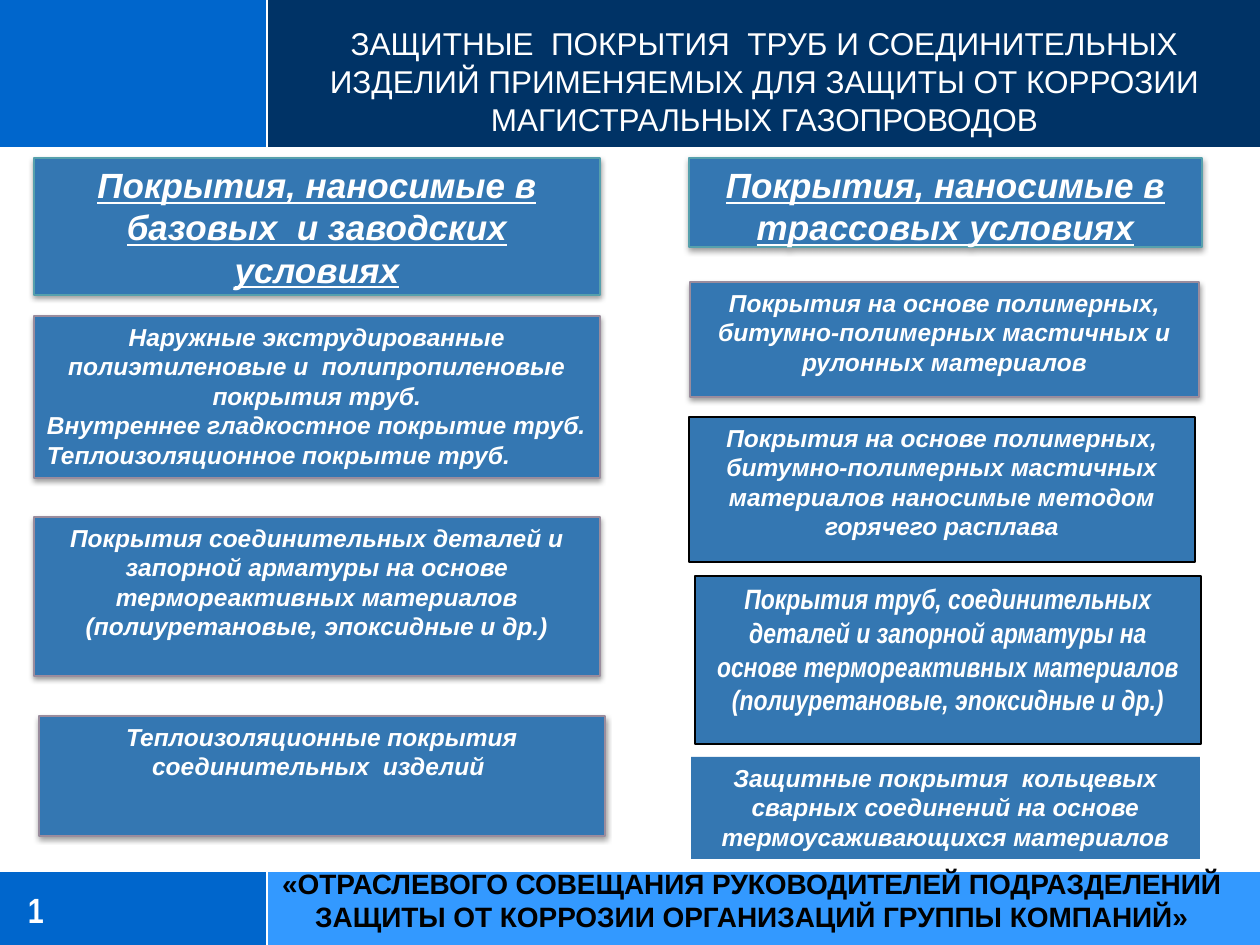
from lxml import etree
from pptx import Presentation
from pptx.dml.color import RGBColor
from pptx.enum.shapes import MSO_CONNECTOR, MSO_SHAPE
from pptx.enum.text import MSO_ANCHOR, MSO_AUTO_SIZE, PP_ALIGN
from pptx.oxml import parse_xml
from pptx.oxml.ns import nsdecls, qn
from pptx.util import Emu, Pt

STRAIGHT = MSO_CONNECTOR.STRAIGHT
RECTANGLE = MSO_SHAPE.RECTANGLE
TOP, MIDDLE = MSO_ANCHOR.TOP, MSO_ANCHOR.MIDDLE
CENTER, LEFT = PP_ALIGN.CENTER, PP_ALIGN.LEFT

WHITE = RGBColor(0xFF, 0xFF, 0xFF)
BLACK = RGBColor(0x00, 0x00, 0x00)
NAVY = RGBColor(0x00, 0x33, 0x66)
BLUE = RGBColor(0x00, 0x66, 0xCC)
SKY = RGBColor(0x33, 0x99, 0xFF)
STEEL = RGBColor(0x34, 0x77, 0xB2)
TEAL = RGBColor(0x56, 0xA0, 0xAC)
MAUVE = RGBColor(0x9A, 0x8C, 0x9D)

PX_PER_INCH = 126
WIDTH, HEIGHT = 1260, 945
SPLIT, HEADER_END, FOOTER_START = 267, 148, 871
INSET = (13, 6)

TITLE = ("ЗАЩИТНЫЕ  ПОКРЫТИЯ  ТРУБ И СОЕДИНИТЕЛЬНЫХ ИЗДЕЛИЙ ПРИМЕНЯЕМЫХ "
         "ДЛЯ ЗАЩИТЫ ОТ КОРРОЗИИ МАГИСТРАЛЬНЫХ ГАЗОПРОВОДОВ")
EVENT = ("«ОТРАСЛЕВОГО СОВЕЩАНИЯ РУКОВОДИТЕЛЕЙ ПОДРАЗДЕЛЕНИЙ "
         "ЗАЩИТЫ ОТ КОРРОЗИИ ОРГАНИЗАЦИЙ ГРУППЫ КОМПАНИЙ»")

HEADINGS = [
    ((34, 158, 566, 137), "Покрытия, наносимые в базовых  и заводских условиях"),
    ((689, 158, 513, 89), "Покрытия, наносимые в трассовых условиях"),
]
SHADED_CARDS = [
    ((690, 282, 509, 115), [
        ("Покрытия на основе полимерных, битумно-полимерных мастичных "
         "и рулонных материалов", CENTER)]),
    ((34, 316, 566, 162), [
        ("Наружные экструдированные полиэтиленовые и  полипропиленовые "
         "покрытия труб.", CENTER),
        ("Внутреннее гладкостное покрытие труб. "
         "Теплоизоляционное покрытие труб.", LEFT)]),
    ((34, 517, 566, 159), [
        ("Покрытия соединительных деталей и запорной арматуры на основе "
         "термореактивных материалов (полиуретановые, эпоксидные и др.)", CENTER)]),
    ((39, 716, 566, 120), [
        ("Теплоизоляционные покрытия соединительных  изделий ", CENTER)]),
]
FLAT_CARDS = [
    ((689, 417, 506, 145), BLACK, 14, "Arial",
     "Покрытия на основе полимерных, битумно-полимерных мастичных "
     "материалов наносимые методом горячего расплава"),
    ((695, 576, 506, 168), BLACK, 16, "Arial Narrow",
     "Покрытия труб, соединительных деталей и запорной арматуры на основе "
     "термореактивных материалов (полиуретановые, эпоксидные и др.)"),
    ((691, 757, 509, 102), None, 14, "Arial",
     "Защитные покрытия  кольцевых сварных соединений на основе "
     "термоусаживающихся материалов"),
]


def px(length):
    return Emu(round(length * 914400 / PX_PER_INCH))


def add_rect(page, place, fill, line=None):
    box = page.shapes.add_shape(RECTANGLE, *map(px, place))
    box.shadow.inherit = False
    box.fill.solid()
    box.fill.fore_color.rgb = fill
    if line is None:
        box.line.fill.background()
    else:
        box.line.color.rgb = line
        box.line.width = Pt(0.75)
    return box


def add_rule(page, start, end):
    rule = page.shapes.add_connector(STRAIGHT, *map(px, start + end))
    rule.line.color.rgb = WHITE
    rule.line.width = Pt(1.25)
    etree.SubElement(rule.element.spPr, qn("a:effectLst"))


def add_shadow(box):
    effects = box.element.spPr.find(qn("a:effectLst"))
    effects.append(parse_xml(
        f'<a:outerShdw {nsdecls("a")} blurRad="40000" dist="20000" dir="5400000" '
        'rotWithShape="0"><a:srgbClr val="000000"><a:alpha val="38000"/>'
        '</a:srgbClr></a:outerShdw>'))


def write(box, paragraphs, size, font="Arial", color=WHITE, bold=True,
          italic=False, underline=False, anchor=TOP, inset=INSET):
    frame = box.text_frame
    frame.word_wrap = True
    frame.auto_size = MSO_AUTO_SIZE.NONE
    frame.vertical_anchor = anchor
    frame.margin_left = frame.margin_right = px(inset[0])
    frame.margin_top = frame.margin_bottom = px(inset[1])
    for index, (text, align) in enumerate(paragraphs):
        para = frame.add_paragraph() if index else frame.paragraphs[0]
        para.alignment = align
        span = para.add_run()
        span.text = text
        span.font.name = font
        span.font.size = Pt(size)
        span.font.bold = bold
        span.font.italic = italic
        span.font.underline = underline
        span.font.color.rgb = color


def add_label(page, place, text, size, align, **style):
    label = page.shapes.add_textbox(*map(px, place))
    write(label, [(text, align)], size, anchor=MIDDLE, inset=(0, 0), **style)


def add_bands(page):
    for top, bottom, right_fill in ((FOOTER_START, HEIGHT, SKY),
                                    (0, HEADER_END, NAVY)):
        add_rect(page, (0, top, SPLIT, bottom - top), BLUE)
        add_rect(page, (SPLIT, top, WIDTH - SPLIT, bottom - top), right_fill)
        add_rule(page, (SPLIT, top), (SPLIT, bottom))
    for edge in (FOOTER_START, HEADER_END):
        add_rule(page, (0, edge), (WIDTH, edge))


def add_title(page):
    title = page.shapes.title
    title.left, title.top, title.width, title.height = map(px, (314, 18, 901, 127))
    write(title, [(TITLE, CENTER)], 18, bold=False)
    title.element.getparent().append(title.element)


def add_cards(page):
    for place, text in HEADINGS:
        box = add_rect(page, place, STEEL, TEAL)
        add_shadow(box)
        write(box, [(text, CENTER)], 20, italic=True, underline=True)
    for place, paragraphs in SHADED_CARDS:
        box = add_rect(page, place, STEEL, MAUVE)
        add_shadow(box)
        write(box, paragraphs, 14, italic=True)
    for place, line, size, font, text in FLAT_CARDS:
        box = add_rect(page, place, STEEL, line)
        write(box, [(text, CENTER)], size, font, italic=True)


def main():
    deck = Presentation()
    deck.slide_width, deck.slide_height = px(WIDTH), px(HEIGHT)
    page = deck.slides.add_slide(deck.slide_layouts[5])
    add_bands(page)
    add_cards(page)
    add_title(page)
    add_label(page, (28, 877, 205, 66), "1", 20, LEFT, font="Arial Narrow")
    add_label(page, (273, 876, 958, 48), EVENT, 16, CENTER, color=BLACK)
    deck.save("out.pptx")


if __name__ == "__main__":
    main()
